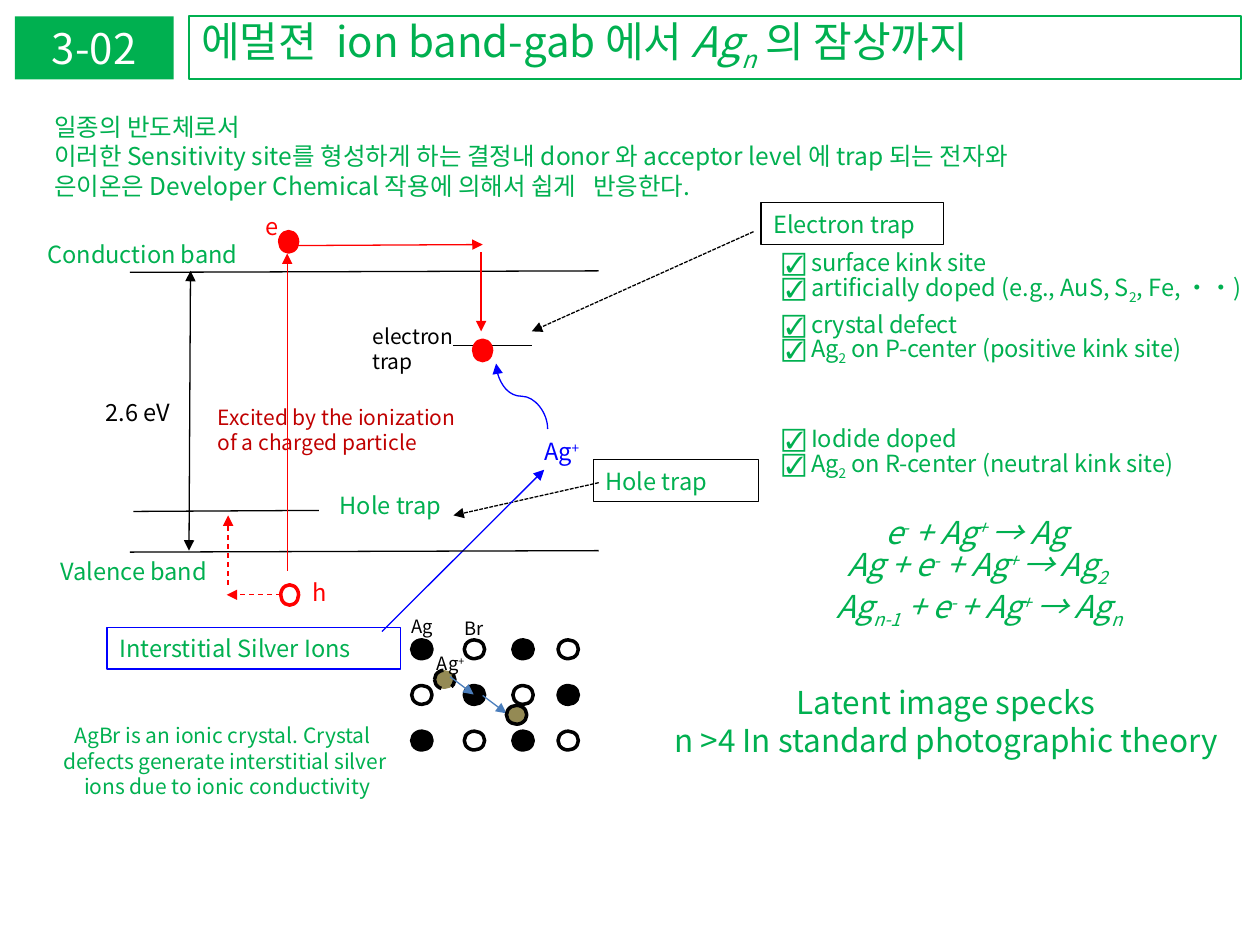
from pptx import Presentation
from pptx.dml.color import RGBColor
from pptx.enum.dml import MSO_LINE as Dash
from pptx.enum.shapes import MSO_CONNECTOR as Link, MSO_SHAPE as Kind
from pptx.enum.text import MSO_ANCHOR as Anchor, PP_ALIGN as Align
from pptx.oxml.ns import qn
from pptx.util import Cm, Pt
from lxml.etree import SubElement

FONT = "Noto Sans CJK KR"
GREEN = RGBColor(0x00, 0xB0, 0x50)
BLACK = RGBColor(0x00, 0x00, 0x00)
WHITE = RGBColor(0xFF, 0xFF, 0xFF)
RED = RGBColor(0xFF, 0x00, 0x00)
DARK_RED = RGBColor(0xC0, 0x00, 0x00)
BLUE = RGBColor(0x00, 0x00, 0xFF)
STEEL = RGBColor(0x4B, 0x7E, 0xBC)
OLIVE = RGBColor(0x94, 0x8A, 0x54)
SHIFTS = {"^": "30000", "_": "-25000"}


def write(shape, text, size=13.5, color=GREEN, align=Align.LEFT,
          italic=False, anchor=Anchor.TOP):
    """Fill a shape; '|' splits runs, which start with ^ (super), _ (sub) or / (italic)."""
    frame = shape.text_frame
    frame.word_wrap = True
    frame.vertical_anchor = anchor
    for i, row in enumerate(text.split("\n")):
        para = frame.paragraphs[0] if i == 0 else frame.add_paragraph()
        para.alignment = align
        para.line_spacing = Pt(size * 1.2)
        para.space_after = Pt(2.5 if "|_" in row else 0)
        for part in row.split("|"):
            slant = part.startswith("/")
            part = part.lstrip("/")
            run = para.add_run()
            run.text = part.lstrip("^_")
            font = run.font
            font.name, font.size, font.italic = FONT, Pt(size), italic or slant
            font.color.rgb = color
            props = run._r.get_or_add_rPr()
            SubElement(props, qn("a:ea"), typeface=FONT)
            if part[:1] in SHIFTS:
                props.set("baseline", SHIFTS[part[0]])


def label(slide, text, x, y, w, h, **style):
    write(slide.shapes.add_textbox(Cm(x), Cm(y), Cm(w), Cm(h)), text, **style)


def shape(slide, kind, x, y, w, h, fill=None, edge=None, width=0.75, dash=None):
    item = slide.shapes.add_shape(kind, Cm(x), Cm(y), Cm(w), Cm(h))
    item.shadow.inherit = False
    if fill is None:
        item.fill.background()
    else:
        item.fill.solid()
        item.fill.fore_color.rgb = fill
    if edge is None:
        item.line.fill.background()
    else:
        item.line.color.rgb = edge
        item.line.width = Pt(width)
        item.line.dash_style = dash
    return item


def box(slide, text, x, y, w, h, fill=None, edge=None, width=0.75, **style):
    item = shape(slide, Kind.RECTANGLE, x, y, w, h, fill, edge, width)
    write(item, text, anchor=Anchor.MIDDLE, **style)


def atom(slide, x, y, fill, dash=None):
    shape(slide, Kind.OVAL, x, y, 0.41, 0.38, fill, BLACK, 2, dash)


def charge(slide, x, y, fill=RED):
    shape(slide, Kind.OVAL, x, y, 0.36, 0.41, fill, RED, 2)


def line(slide, x1, y1, x2, y2, color=BLACK, ends=(), dash=None,
         kind=Link.STRAIGHT, turn=0):
    """Draw a connector; ends lists 'headEnd' and 'tailEnd' where arrows go."""
    item = slide.shapes.add_connector(kind, Cm(x1), Cm(y1), Cm(x2), Cm(y2))
    item.line.color.rgb = color
    item.line.width = Pt(0.75)
    item.line.dash_style = dash
    props = item._element.spPr
    for end in ends:
        SubElement(props.find(qn("a:ln")), qn("a:" + end), type="triangle")
    SubElement(props, qn("a:effectLst"))
    if turn:
        props.find(qn("a:xfrm")).set("rot", str(turn * 60000))


def arrow(slide, x1, y1, x2, y2, color=BLACK, **style):
    line(slide, x1, y1, x2, y2, color, ("tailEnd",), **style)


def header(slide):
    box(slide, "에멀젼  ion band-gab 에서 |/Ag|/_n| 의 잠상까지",
        3.81, 0.33, 21.21, 1.27, edge=GREEN, width=1, size=24)
    box(slide, "3-02", 0.3, 0.33, 3.2, 1.27, fill=GREEN,
        size=24, color=WHITE, align=Align.CENTER)
    label(slide, "일종의 반도체로서\n"
          "이러한 Sensitivity site를 형성하게 하는 결정내 donor 와 acceptor level 에 trap 되는 전자와\n"
          "은이온은 Developer Chemical 작용에 의해서 쉽게   반응한다.",
          0.84, 2.13, 22.07, 2.06, size=14)


def traps(slide):
    arrow(slide, 15.19, 4.67, 10.72, 6.68, dash=Dash.SQUARE_DOT)
    box(slide, "Electron trap", 15.34, 4.09, 3.68, 0.84, edge=BLACK)
    label(slide, "☑ surface kink site\n"
          "☑ artificially doped (e.g., AuS, S|_2|, Fe, ・・)\n"
          "☑ crystal defect\n"
          "☑ Ag|_2| on P-center (positive kink site)",
          15.52, 4.88, 10.19, 2.57)
    arrow(slide, 12.07, 9.73, 9.14, 10.39, dash=Dash.SQUARE_DOT)
    box(slide, "Hole trap", 11.96, 9.27, 3.33, 0.84, edge=BLACK)
    label(slide, "☑ Iodide doped\n☑ Ag|_2| on R-center (neutral kink site)",
          15.52, 8.43, 9.68, 1.42)


def formulas(slide):
    label(slide, "e|^-| + Ag|^+ |→ Ag \n"
          "Ag + e|^-| + Ag|^+ |→ Ag|_2 \n"
          "Ag|_n-1| + e|^- |+ Ag|^+ |→ Ag|_n",
          15.42, 10.21, 8.66, 2.57, size=18, italic=True, align=Align.CENTER)
    label(slide, "Latent image specks\nn >4 In standard photographic theory",
          13.03, 13.64, 25.12 - 13.03, 1.8, size=18, align=Align.CENTER)


def lattice(slide):
    for row in range(3):
        for col, x in enumerate((8.3, 9.36, 10.34, 11.25)):
            fill = WHITE if (row + col) % 2 else BLACK
            atom(slide, x, 12.9 + 0.92 * row, fill)
    small = dict(w=1.24, h=0.71, size=10.5, color=BLACK)
    label(slide, "Ag", 8.05, 12.27, **small)
    label(slide, "Br", 9.12, 12.32, **small)
    atom(slide, 8.76, 13.51, OLIVE, Dash.DASH)
    label(slide, "Ag|^+", 8.56, 13.03, **small)
    arrow(slide, 9.07, 13.64, 9.55, 14, STEEL)
    arrow(slide, 9.73, 14.02, 10.21, 14.38, STEEL)
    atom(slide, 10.21, 14.22, OLIVE)


def silver(slide):
    arrow(slide, 9.86, 8.51, 11.18, 7.47, BLUE, kind=Link.CURVE, turn=270)
    label(slide, "Ag|^+", 10.72, 8.69, 2.18, 0.84, color=BLUE)
    arrow(slide, 7.7, 12.73, 10.97, 9.47, BLUE)
    box(slide, "Interstitial Silver Ions", 2.16, 12.65, 5.92, 0.84, edge=BLUE)
    label(slide, "AgBr is an ionic crystal. Crystal \n"
          "defects generate interstitial silver\n ions due to ionic conductivity",
          1.02, 14.45, 7.04, 1.8, size=12, align=Align.CENTER)


def bands(slide):
    line(slide, 2.62, 5.49, 12.07, 5.46)
    line(slide, 2.62, 11.13, 12.07, 11.1)
    line(slide, 2.69, 10.31, 6.43, 10.29)
    line(slide, 9.14, 6.96, 10.72, 6.96)
    line(slide, 3.84, 5.46, 3.81, 11.1, ends=("headEnd", "tailEnd"))
    label(slide, "Conduction band", 0.71, 4.72, 4.42, 0.84)
    label(slide, "Valence band", 0.97, 11.1, 3.89, 0.84)
    label(slide, "Hole trap", 6.6, 9.78, 2.9, 0.84)
    label(slide, "2.6 eV", 1.88, 7.9, 3.89, 0.84, color=BLACK)
    label(slide, "electron trap", 7.26, 6.4, 2.26, 1.27, size=12, color=BLACK)
    label(slide, "Excited by the ionization of a charged particle",
          4.14, 8.03, 5.64, 1.27, size=12, color=DARK_RED)


def carriers(slide):
    arrow(slide, 5.79, 11.51, 5.79, 5.11, RED)
    arrow(slide, 5.99, 4.95, 9.73, 4.93, RED)
    arrow(slide, 9.7, 5.08, 9.7, 6.68, RED)
    arrow(slide, 5.66, 11.99, 4.57, 11.99, RED, dash=Dash.DASH)
    arrow(slide, 4.6, 11.79, 4.6, 10.39, RED, dash=Dash.DASH)
    charge(slide, 5.64, 4.67)
    charge(slide, 9.55, 6.86)
    charge(slide, 5.66, 11.79, None)
    label(slide, "e", 5.11, 4.14, 1.78, 0.84, color=RED)
    label(slide, "h", 6.05, 11.53, 1.78, 0.84, color=RED)


def main():
    deck = Presentation()
    deck.slide_width, deck.slide_height = Cm(25.4), Cm(19.05)
    slide = deck.slides.add_slide(deck.slide_layouts[6])
    for draw in (formulas, traps, silver, lattice, bands, carriers, header):
        draw(slide)
    deck.save("out.pptx")


if __name__ == "__main__":
    main()
